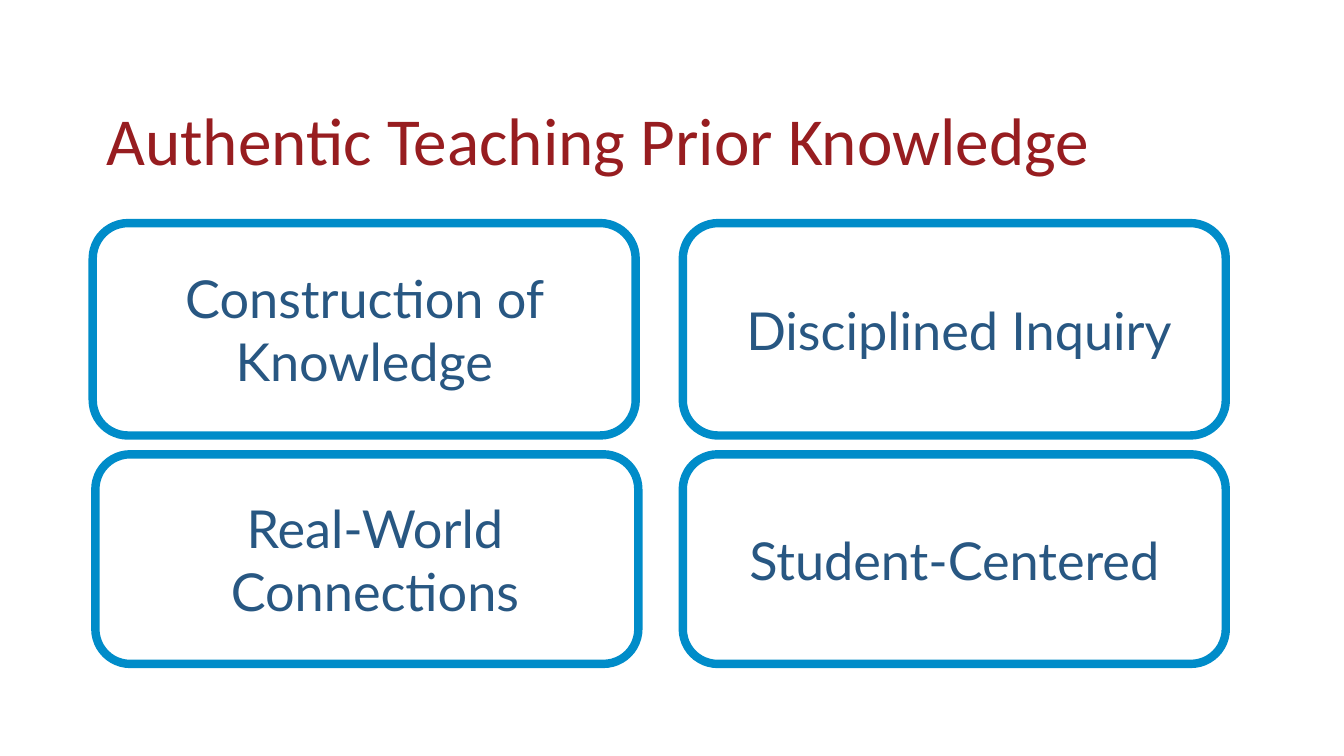
from pptx import Presentation
from pptx.dml.color import RGBColor
from pptx.enum.shapes import MSO_SHAPE
from pptx.enum.text import MSO_ANCHOR, PP_ALIGN
from pptx.util import Pt

COLORS = {"title": "971D20", "line": "008CC9", "text": "285782"}
TITLE = "Authentic Teaching Prior Knowledge"
# text, column, row, left nudge, paragraph indent
CARDS = [
    ("Construction of Knowledge", 0, 0, 0, 0),
    ("Disciplined Inquiry", 1, 0, 0, 5),
    ("Real-World Connections", 0, 1, 1.4, 8.6),
    ("Student-Centered", 1, 1, 0, 0),
]
COLUMNS = [49.7, 365.8]
ROWS = [(119.5, 113.8), (243.4, 112.3)]
CARD_W = 290.9


def style(p, font, size, color):
    """Format every run of a paragraph."""
    for r in p.runs:
        r.font.name = font
        r.font.size = Pt(size)
        r.font.color.rgb = RGBColor.from_string(COLORS[color])


def add_title(s):
    """Place and format the title placeholder."""
    sp = s.shapes.title
    sp.left, sp.top, sp.width, sp.height = Pt(49.7), Pt(21.6), Pt(620.6), Pt(78.5)
    tf = sp.text_frame
    tf.text = TITLE
    tf.word_wrap = True
    tf.vertical_anchor = MSO_ANCHOR.BOTTOM
    p = tf.paragraphs[0]
    p.alignment = PP_ALIGN.LEFT
    p.line_spacing = 0.9
    style(p, "Calibri", 36, "title")


def add_card(s, text, col, row, nudge, indent):
    """Add one outlined card at its grid position."""
    top, height = ROWS[row]
    sp = s.shapes.add_shape(MSO_SHAPE.ROUNDED_RECTANGLE, Pt(COLUMNS[col] + nudge),
                            Pt(top), Pt(CARD_W), Pt(height))
    sp.shadow.inherit = False
    sp.fill.background()
    sp.line.color.rgb = RGBColor.from_string(COLORS["line"])
    sp.line.width = Pt(4.5)
    tf = sp.text_frame
    tf.text = text
    tf.word_wrap = True
    tf.vertical_anchor = MSO_ANCHOR.MIDDLE
    p = tf.paragraphs[0]
    p.alignment = PP_ALIGN.CENTER
    if indent:
        pPr = p._p.get_or_add_pPr()
        pPr.set("marL", str(Pt(indent)))
        pPr.set("indent", "0")
    style(p, "Lato", 28, "text")


def main():
    """Build the slide and save it."""
    prs = Presentation()
    prs.slide_width, prs.slide_height = Pt(720), Pt(405)
    s = prs.slides.add_slide(prs.slide_layouts[5])
    add_title(s)
    for card in CARDS:
        add_card(s, *card)
    prs.save("out.pptx")


if __name__ == "__main__":
    main()
